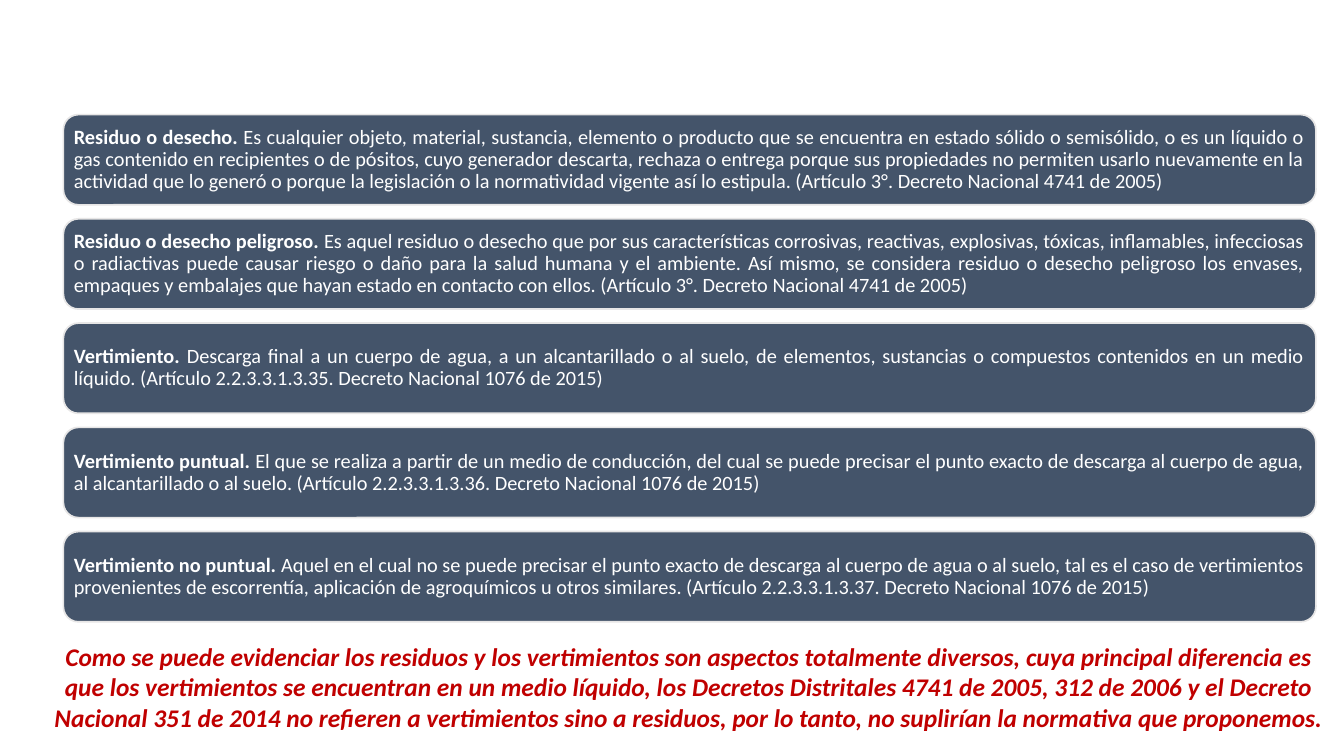
from pptx import Presentation, util as u
from pptx.dml.color import RGBColor
from pptx.enum import shapes, text

WIDE, HIGH = 11.02, 6.2
FONT = "Calibri"
SLATE, PALE, WHITE, RED = "44546A", "E7E6E6", "FFFFFF", "C00000"

TERMS = [
    ("Residuo o desecho.",
     "Es cualquier objeto, material, sustancia, elemento o producto que se encuentra en estado sólido o "
     "semisólido, o es un líquido o gas contenido en recipientes o de pósitos, cuyo generador descarta, "
     "rechaza o entrega porque sus propiedades no permiten usarlo nuevamente en la actividad que lo generó "
     "o porque la legislación o la normatividad vigente así lo estipula. "
     "(Artículo 3°. Decreto Nacional 4741 de 2005)"),
    ("Residuo o desecho peligroso.",
     "Es aquel residuo o desecho que por sus características corrosivas, reactivas, explosivas, tóxicas, "
     "inflamables, infecciosas o radiactivas puede causar riesgo o daño para la salud humana y el ambiente. "
     "Así mismo, se considera residuo o desecho peligroso los envases, empaques y embalajes que hayan estado "
     "en contacto con ellos. (Artículo 3°. Decreto Nacional 4741 de 2005)"),
    ("Vertimiento.",
     "Descarga final a un cuerpo de agua, a un alcantarillado o al suelo, de elementos, sustancias o "
     "compuestos contenidos en un medio líquido. (Artículo 2.2.3.3.1.3.35. Decreto Nacional 1076 de 2015)"),
    ("Vertimiento puntual.",
     "El que se realiza a partir de un medio de conducción, del cual se puede precisar el punto exacto de "
     "descarga al cuerpo de agua, al alcantarillado o al suelo. "
     "(Artículo 2.2.3.3.1.3.36. Decreto Nacional 1076 de 2015)"),
    ("Vertimiento no puntual.",
     "Aquel en el cual no se puede precisar el punto exacto de descarga al cuerpo de agua o al suelo, tal es "
     "el caso de vertimientos provenientes de escorrentía, aplicación de agroquímicos u otros similares. "
     "(Artículo 2.2.3.3.1.3.37. Decreto Nacional 1076 de 2015)"),
]
CLOSING = (
    "Como se puede evidenciar los residuos y los vertimientos son aspectos totalmente diversos, cuya principal "
    "diferencia es que los vertimientos se encuentran en un medio líquido, los Decretos Distritales 4741 de "
    "2005, 312 de 2006 y el Decreto Nacional 351 de 2014 no refieren a vertimientos sino a residuos, por lo "
    "tanto, no suplirían la normativa que proponemos.")

LEFT, TOP, WIDTH, BAR, GAP = 0.52, 0.94, 10.27, 0.74, 0.11
PITCH = (4.36 - TOP) / (len(TERMS) - 1)


def color(code):
    return RGBColor.from_string(code)


def style(run, size, code, bold=False, italic=False):
    font = run.font
    font.name, font.size = FONT, u.Pt(size)
    font.bold, font.italic = bold, italic
    font.color.rgb = color(code)


def add_term(slide, row, term, meaning):
    box = [u.Inches(n) for n in (LEFT, TOP + row * PITCH, WIDTH, BAR)]
    bar = slide.shapes.add_shape(shapes.MSO_SHAPE.ROUNDED_RECTANGLE, *box)
    bar.shadow.inherit = False
    bar.fill.solid()
    bar.fill.fore_color.rgb = color(SLATE)
    bar.line.color.rgb = color(PALE)
    bar.line.width = u.Pt(1)
    frame = bar.text_frame
    frame.word_wrap = True
    frame.vertical_anchor = text.MSO_ANCHOR.MIDDLE
    frame.margin_left = frame.margin_right = u.Inches(0.05)
    frame.margin_top = frame.margin_bottom = u.Inches(0.05)
    para = frame.paragraphs[0]
    para.alignment = text.PP_ALIGN.JUSTIFY
    para.line_spacing = 0.9
    for words, bold in ((term + " ", True), (meaning, False)):
        run = para.add_run()
        run.text = words
        style(run, 12, WHITE, bold)


def add_closing(slide):
    box = [u.Inches(n) for n in (0.34, 0.84 * HIGH, 10.62, 0.86)]
    frame = slide.shapes.add_textbox(*box).text_frame
    frame.word_wrap = True
    para = frame.paragraphs[0]
    para.text = CLOSING
    para.alignment = text.PP_ALIGN.CENTER
    style(para.runs[0], 15, RED, bold=True, italic=True)


def main():
    deck = Presentation()
    deck.slide_width, deck.slide_height = u.Inches(WIDE), u.Inches(HIGH)
    slide = deck.slides.add_slide(deck.slide_layouts[6])
    add_closing(slide)
    for row, (term, meaning) in enumerate(TERMS):
        add_term(slide, row, term, meaning)
    deck.save("out.pptx")


if __name__ == "__main__":
    main()
